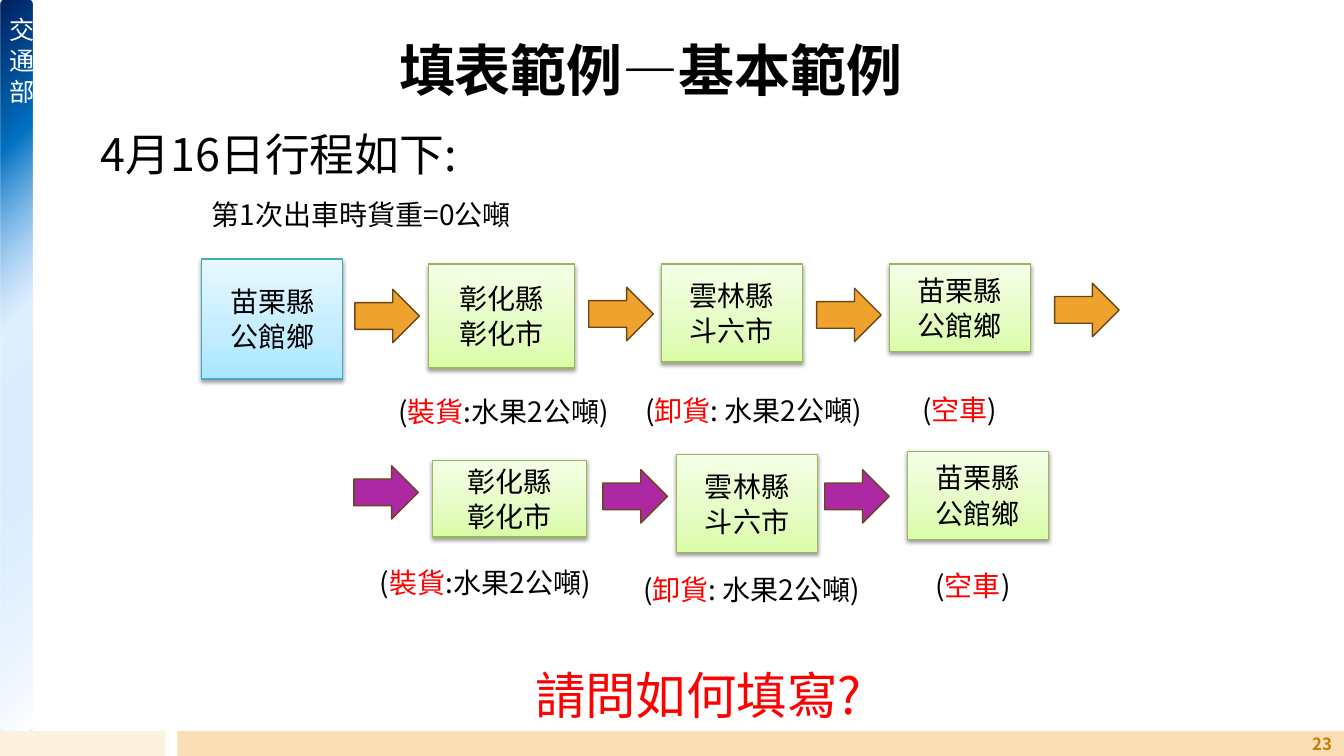
"""Build the trip itinerary example slide with two rows of stops."""
from lxml import etree
from pptx import Presentation
from pptx.dml.color import RGBColor
from pptx.enum.shapes import MSO_SHAPE
from pptx.enum.text import MSO_ANCHOR, MSO_AUTO_SIZE, PP_ALIGN
from pptx.oxml import parse_xml
from pptx.oxml.ns import nsdecls, qn
from pptx.util import Inches, Pt

RECTANGLE = MSO_SHAPE.RECTANGLE
ROUNDED = MSO_SHAPE.ROUNDED_RECTANGLE
ARROW = MSO_SHAPE.RIGHT_ARROW
LEFT, CENTER, RIGHT = PP_ALIGN.LEFT, PP_ALIGN.CENTER, PP_ALIGN.RIGHT
TOP, MIDDLE = MSO_ANCHOR.TOP, MSO_ANCHOR.MIDDLE

THEME = {
    "font": "Noto Sans CJK SC", "number_font": "Noto Sans CJK TC",
    "title": 40, "question": 36, "heading": 32, "text": 20, "ministry": 18, "number": 12,
    "black": "000000", "red": "FF0000", "white": "FFFFFF", "gold": "C87D0E",
    "footer_light": "FDF1E0", "footer": "FADEB6",
    "orange": "F0A22E", "purple": "AD29A4", "arrow_line": "694714",
    "start": ("46AAC5", [(0, "A7E6FF", 100), (35, "C1EDFF", 100), (100, "E7F8FF", 100)]),
    "stop": ("98B955", [(0, "DAFDA7", 100), (35, "E4FCC2", 100), (100, "F5FFE7", 100)]),
    "sidebar": [(0, "FFFFFF", 100), (56, "99CCFF", 30), (80, "0070C0", 100), (100, "002060", 100)],
}
LINEAR = '<a:lin ang="16200000" scaled="0"/>'
CIRCULAR = '<a:path path="circle"><a:fillToRect l="100000" t="100000"/></a:path>'


def write(shape, lines, size, color="black", align=LEFT, anchor=TOP, bold=False, font="font"):
    """Fill a shape with lines, each a list of (text, colour) runs or a plain string."""
    frame = shape.text_frame
    settings = {"word_wrap": True, "auto_size": MSO_AUTO_SIZE.NONE, "vertical_anchor": anchor}
    for name, value in settings.items():
        setattr(frame, name, value)
    for index, line in enumerate(lines):
        paragraph = frame.add_paragraph() if index else frame.paragraphs[0]
        paragraph.alignment = align
        for text, run_color in [(line, color)] if isinstance(line, str) else line:
            run = paragraph.add_run()
            run.text = text
            run.font.color.rgb = RGBColor.from_string(THEME[run_color])
            for name, value in {"size": Pt(THEME[size]), "bold": bold, "name": THEME[font]}.items():
                setattr(run.font, name, value)
            etree.SubElement(run.font._element, qn("a:ea"), typeface=THEME[font])
    return frame


def add_block(kind, place, fill, line=None, direction=LINEAR):
    """Add a preset shape with a solid colour or a list of gradient stops."""
    shape = slide.shapes.add_shape(kind, *map(Inches, place))
    shape.shadow.inherit = False
    if isinstance(fill, str):
        shape.fill.solid()
        shape.fill.fore_color.rgb = RGBColor.from_string(fill)
    else:
        stops = "".join(
            f'<a:gs pos="{position * 1000}"><a:srgbClr val="{color}">'
            f'<a:alpha val="{alpha * 1000}"/></a:srgbClr></a:gs>'
            for position, color, alpha in fill)
        gradient = parse_xml(f'<a:gradFill {nsdecls("a")} rotWithShape="1">'
                             f'<a:gsLst>{stops}</a:gsLst>{direction}</a:gradFill>')
        shape._element.spPr.find(qn("a:prstGeom")).addnext(gradient)
    if line:
        shape.line.color.rgb = RGBColor.from_string(line)
        shape.line.width = Pt(1)
    else:
        shape.line.fill.background()
    return shape


presentation = Presentation()
presentation.slide_width, presentation.slide_height = Inches(13.33), Inches(7.5)
slide = presentation.slides.add_slide(presentation.slide_layouts[5])

title = slide.shapes.title
for name, value in zip(("left", "top", "width", "height"), (-0.02, 0.3, 12.95, 0.77)):
    setattr(title, name, Inches(value))
write(title, ["填表範例—基本範例"], "title", align=CENTER, bold=True)

add_block(RECTANGLE, (0, 7.25, 1.64, 0.25), THEME["footer_light"])
add_block(RECTANGLE, (1.76, 7.25, 11.57, 0.25), THEME["footer"])
sidebar = add_block(ROUNDED, (-3.46, 3.46, 7.25, 0.32), THEME["sidebar"], direction=CIRCULAR)
sidebar.rotation = 90

ministry = slide.shapes.add_textbox(*map(Inches, (-0.09, 0.07, 0.5, 1.34)))
frame = write(ministry, ["交 通 部"], "ministry", "white")
frame._txBody.bodyPr.set("vert", "eaVert")

captions = [
    ((3.85, 3.86, 2.32, 0.53), "裝貨", ":水果2公噸)"),
    ((6.3, 3.85, 2.52, 0.48), "卸貨", ": 水果2公噸)"),
    ((9.05, 3.84, 1.4, 0.48), "空車", ")"),
    ((3.67, 5.56, 2.41, 0.45), "裝貨", ":水果2公噸)"),
    ((6.28, 5.63, 2.41, 0.34), "卸貨", ": 水果2公噸)"),
    ((9.18, 5.59, 1.4, 0.39), "空車", ")"),
]
for place, action, rest in captions:
    caption = slide.shapes.add_textbox(*map(Inches, place))
    write(caption, [[("(", "black"), (action, "red"), (rest, "black")]], "text")

miaoli, changhua, yunlin = ("苗栗縣", "公館鄉"), ("彰化縣", "彰化市"), ("雲林縣", "斗六市")
stops = [
    ((2, 2.57, 1.4, 1.19), miaoli, "start"),
    ((4.25, 2.62, 1.45, 1.03), changhua, "stop"),
    ((6.56, 2.62, 1.4, 0.97), yunlin, "stop"),
    ((8.82, 2.62, 1.4, 0.87), miaoli, "stop"),
    ((4.29, 4.57, 1.53, 0.76), changhua, "stop"),
    ((6.71, 4.51, 1.4, 0.97), yunlin, "stop"),
    ((9, 4.48, 1.4, 0.87), miaoli, "stop"),
]
for place, town, style in stops:
    line, gradient = THEME[style]
    box = add_block(RECTANGLE, place, gradient, line)
    box._element.spPr.find(qn("a:effectLst")).append(parse_xml(
        f'<a:outerShdw {nsdecls("a")} blurRad="{Pt(3.1)}" dist="{Pt(1.6)}" dir="5400000" '
        'rotWithShape="0"><a:srgbClr val="000000"><a:alpha val="38000"/></a:srgbClr></a:outerShdw>'))
    frame = write(box, town, "text", align=CENTER, anchor=MIDDLE)
    for side in ("left", "top", "right", "bottom"):
        setattr(frame, f"margin_{side}", 0)
    frame.paragraphs[1].space_before = Pt(1.2)

labels = [
    ((2, 1.91, 3.32, 0.44), "第1次出車時貨重=0公噸", {"size": "text"}),
    ((0.9, 1.21, 5.74, 0.48), "4月16日行程如下:", {"size": "heading"}),
    ((2.33, 6.54, 9.19, 0.71), "請問如何填寫?", {"size": "question", "color": "red", "align": CENTER}),
    ((12.86, 7.25, 0.45, 0.25), "23", {"size": "number", "color": "gold", "align": RIGHT,
                                       "anchor": MIDDLE, "bold": True, "font": "number_font"}),
]
for place, text, style in labels:
    label = slide.shapes.add_textbox(*map(Inches, place))
    write(label, [text], **style)

arrows = {
    "orange": [(3.52, 2.87), (5.84, 2.85), (8.1, 2.86), (10.46, 2.81)],
    "purple": [(3.51, 4.62), (5.98, 4.66), (8.18, 4.66)],
}
for color, corners in arrows.items():
    for left, top in corners:
        add_block(ARROW, (left, top, 0.64, 0.53), THEME[color], THEME["arrow_line"])

presentation.save("out.pptx")
